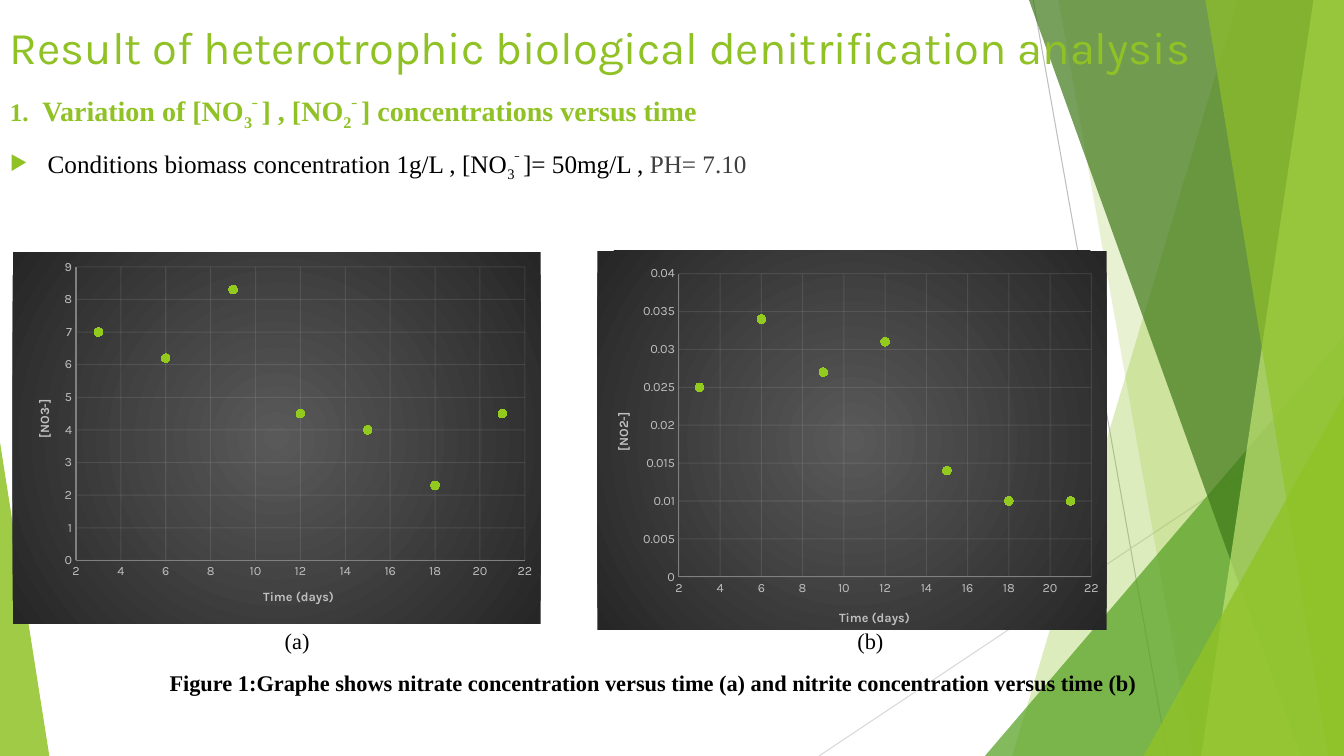
from lxml import etree
from pptx import Presentation
from pptx.chart.data import XyChartData
from pptx.dml.color import RGBColor
from pptx.enum.chart import XL_CHART_TYPE, XL_MARKER_STYLE, XL_TICK_MARK
from pptx.enum.shapes import MSO_CONNECTOR, MSO_SHAPE
from pptx.enum.text import MSO_ANCHOR, PP_ALIGN
from pptx.oxml import parse_xml
from pptx.oxml.ns import nsdecls, qn
from pptx.util import Pt

PX = 9525
SCATTER = XL_CHART_TYPE.XY_SCATTER
CIRCLE = XL_MARKER_STYLE.CIRCLE
NO_TICK = XL_TICK_MARK.NONE
STRAIGHT = MSO_CONNECTOR.STRAIGHT
TRIANGLE = MSO_SHAPE.ISOSCELES_TRIANGLE
MIDDLE = MSO_ANCHOR.MIDDLE
CENTER = PP_ALIGN.CENTER

GREEN = RGBColor(0x90, 0xC2, 0x26)
MID_GREEN = RGBColor(0x54, 0xA0, 0x21)
DARK_GREEN = RGBColor(0x3F, 0x78, 0x19)
PALE_GREEN = RGBColor(0xC0, 0xE4, 0x74)
MARKER_GREEN = RGBColor(0x93, 0xCA, 0x1E)
BLACK = RGBColor(0, 0, 0)
CHARCOAL = RGBColor(0x40, 0x40, 0x40)
AXIS_GRAY = RGBColor(0x80, 0x80, 0x80)
SILVER = RGBColor(0xBF, 0xBF, 0xBF)
LIGHT_GRAY = RGBColor(0xD9, 0xD9, 0xD9)
GRID_WHITE = RGBColor(0xF2, 0xF2, 0xF2)
PANEL_INNER = RGBColor(0x59, 0x59, 0x59)
PANEL_OUTER = RGBColor(0x26, 0x26, 0x26)

SERIF, SANS = "Times New Roman", "Karla"
SUB, SUPER = -25, 30
DAYS = range(3, 22, 3)


def emu(*lengths):
    return [length * PX for length in lengths]


def set_opacity(element, percent):
    color = element.find(".//" + qn("a:srgbClr"))
    etree.SubElement(color, qn("a:alpha")).set("val", str(percent * 1000))


def paint(shape, color, opacity):
    shape.shadow.inherit = False
    shape.fill.solid()
    shape.fill.fore_color.rgb = color
    set_opacity(shape._element.spPr, opacity)
    shape.line.fill.background()


def add_facets(slide, box):
    """Draw the translucent green facets along the sides of the slide."""
    left, top, width, height = box
    right, bottom = left + width, top + height

    def hairline(x1, y1, x2, y2, color):
        line = slide.shapes.add_connector(
            STRAIGHT, *emu(left + x1, top + y1, left + x2, top + y2))
        line.line.color.rgb = color
        line.line.width = Pt(0.75)
        etree.SubElement(line._element.spPr, qn("a:effectLst"))

    def band(top_x, bottom_x, color, opacity):
        builder = slide.shapes.build_freeform(left + top_x, top, scale=PX)
        builder.add_line_segments(
            [(right, top), (right, bottom), (left + bottom_x, bottom)])
        paint(builder.convert_to_shape(), color, opacity)

    def corner(x, wide, high, apex, color, opacity):
        shape = slide.shapes.add_shape(
            TRIANGLE, *emu(left + x, bottom - high, wide, high))
        shape.adjustments[0] = apex
        paint(shape, color, opacity)

    hairline(984, 0, 1112, height, SILVER)
    hairline(width, 387, 780, height, LIGHT_GRAY)
    band(1179, 964, GREEN, 30)
    band(1008, 1136, GREEN, 20)
    corner(938, 342, 400, 1, MID_GREEN, 72)
    band(980, 1239, DARK_GREEN, 70)
    band(1251, 1144, PALE_GREEN, 70)
    band(1148, 1265, GREEN, 65)
    corner(1089, 191, 343, 1, GREEN, 80)
    corner(0, 47, 299, 0, GREEN, 85)


def add_text_box(slide, box):
    frame = slide.shapes.add_textbox(*emu(*box)).text_frame
    frame.word_wrap = True
    return frame


def add_run(paragraph, text, size, color, font=SERIF, bold=False, baseline=0):
    run = paragraph.add_run()
    run.text = text
    run.font.size = Pt(size)
    run.font.name = font
    run.font.bold = bold
    run.font.color.rgb = color
    if baseline:
        run._r.get_or_add_rPr().set("baseline", str(baseline * 1000))


def set_hanging_indent(paragraph, indent):
    properties = paragraph._p.get_or_add_pPr()
    properties.set("marL", str(indent * PX))
    properties.set("indent", str(-indent * PX))
    return properties


def add_title(slide, box):
    paragraph = add_text_box(slide, box).paragraphs[0]
    add_run(paragraph, "Result of heterotrophic biological denitrification analysis",
            32.4, GREEN, SANS)


def add_conditions(slide, box):
    """Write the numbered heading and the bullet below it."""
    frame = add_text_box(slide, box)
    heading = frame.paragraphs[0]
    heading.line_spacing = 1.07
    set_hanging_indent(heading, 31)
    add_run(heading, "1.\t", 18, GREEN, bold=True)
    for text, baseline in (("Variation of [NO", 0), ("3", SUB), ("ˉ ", SUPER),
                           ("] , [NO", 0), ("2", SUB), ("ˉ ", SUPER),
                           ("] concentrations versus time", 0)):
        add_run(heading, text, 20, GREEN, bold=True, baseline=baseline)

    bullet = frame.add_paragraph()
    properties = set_hanging_indent(bullet, 36)
    color = etree.SubElement(properties, qn("a:buClr"))
    etree.SubElement(color, qn("a:srgbClr")).set("val", str(GREEN))
    etree.SubElement(properties, qn("a:buSzPct")).set("val", "80000")
    etree.SubElement(properties, qn("a:buChar")).set("char", "▶")
    bullet.line_spacing = 1.07
    bullet.space_before = Pt(10)
    for text, baseline in (("Conditions biomass concentration 1g/L , [NO", 0),
                           ("3", SUB), ("ˉ ", SUPER), ("]= 50mg/L , ", 0)):
        add_run(bullet, text, 18, BLACK, baseline=baseline)
    add_run(bullet, "PH= 7.10", 18, CHARCOAL)


def add_caption(slide, box, text, bold=False):
    frame = add_text_box(slide, box)
    frame.vertical_anchor = MIDDLE
    frame.paragraphs[0].alignment = CENTER
    add_run(frame.paragraphs[0], text, 16, BLACK, bold=bold)


def place(part, index, **fractions):
    """Fix a chart part at fractions of the chart; index is where its layout belongs."""
    layout = part.find(qn("c:layout"))
    if layout is None:
        layout = etree.Element(qn("c:layout"))
        part.insert(index, layout)
    manual = etree.SubElement(layout, qn("c:manualLayout"))
    if "w" in fractions:
        etree.SubElement(manual, qn("c:layoutTarget")).set("val", "inner")
    for name in ("x", "y"):
        etree.SubElement(manual, qn(f"c:{name}Mode")).set("val", "edge")
    for name, value in fractions.items():
        etree.SubElement(manual, qn(f"c:{name}")).set("val", str(value))


def style_axis(axis, title, title_at, scale):
    axis.minimum_scale, axis.maximum_scale, axis.major_unit = scale
    axis.major_tick_mark = axis.minor_tick_mark = NO_TICK
    axis.tick_labels.font.size = Pt(9)
    axis.tick_labels.font.name = SANS
    axis.tick_labels.font.color.rgb = SILVER
    axis.tick_labels.number_format = "General"
    axis.tick_labels.number_format_is_linked = False
    axis.has_major_gridlines = True
    for line, color in ((axis.format.line, AXIS_GRAY),
                        (axis.major_gridlines.format.line, GRID_WHITE)):
        line.color.rgb = color
        line.width = Pt(0.75)
    set_opacity(axis._element.find(qn("c:majorGridlines")), 10)
    add_run(axis.axis_title.text_frame.paragraphs[0], title, 9, SILVER, SANS, True)
    x, y = title_at
    place(axis._element.find(qn("c:title")), 1, x=x, y=y)


def add_scatter(slide, box, values, name, scale, plot, time_at, name_at):
    data = XyChartData()
    series_data = data.add_series("Series 1")
    for day, value in zip(DAYS, values):
        series_data.add_data_point(day, value)
    chart = slide.shapes.add_chart(SCATTER, *emu(*box), data).chart
    chart.has_legend = chart.has_title = False
    chart.font.size, chart.font.name = Pt(10), SANS
    chart.plots[0].vary_by_categories = False

    series = chart.plots[0].series[0]
    series.format.line.fill.background()
    series.marker.style, series.marker.size = CIRCLE, 6
    series.marker.format.fill.solid()
    series.marker.format.fill.fore_color.rgb = MARKER_GREEN
    series.marker.format.line.color.rgb = MARKER_GREEN

    style_axis(chart.category_axis, "Time (days)", time_at, (2, 22, 2))
    style_axis(chart.value_axis, name, name_at, scale)

    chart_element = chart._chartSpace.find(qn("c:chart"))
    place(chart_element.find(qn("c:plotArea")), 0, **dict(zip("xywh", plot)))
    chart_element.addnext(parse_xml(
        f'<c:spPr {nsdecls("c", "a")}><a:gradFill><a:gsLst>'
        f'<a:gs pos="0"><a:srgbClr val="{PANEL_INNER}"/></a:gs>'
        f'<a:gs pos="100000"><a:srgbClr val="{PANEL_OUTER}"/></a:gs></a:gsLst>'
        '<a:path path="circle"><a:fillToRect l="50000" t="50000" r="50000" b="50000"/>'
        '</a:path></a:gradFill><a:ln><a:noFill/></a:ln></c:spPr>'))


def main():
    presentation = Presentation()
    presentation.slide_width, presentation.slide_height = emu(1280, 720)
    slide = presentation.slides.add_slide(presentation.slide_layouts[6])
    add_facets(slide, (0, 0, 1280, 720))
    add_title(slide, (0, 14, 1280, 70))
    add_conditions(slide, (0, 82, 1200, 100))
    add_caption(slide, (253, 594, 60, 32), "(a)")
    add_caption(slide, (799, 594, 60, 32), "(b)")
    add_caption(slide, (44, 634, 1156, 32), "Figure 1:Graphe shows nitrate concentration "
                "versus time (a) and nitrite concentration versus time (b)", bold=True)
    add_scatter(slide, (12, 240, 503, 354), (7, 6.2, 8.3, 4.5, 4, 2.3, 4.5), "[NO3-]",
                (0, 9, 1), (0.12, 0.04, 0.85, 0.79), (0.47, 0.9), (0.04, 0.39))
    add_scatter(slide, (569, 239, 485, 361),
                (0.025, 0.034, 0.027, 0.031, 0.014, 0.01, 0.01), "[NO2-]",
                (0, 0.04, 0.005), (0.16, 0.06, 0.81, 0.8), (0.47, 0.94), (0.03, 0.42))
    presentation.save("out.pptx")


if __name__ == "__main__":
    main()
